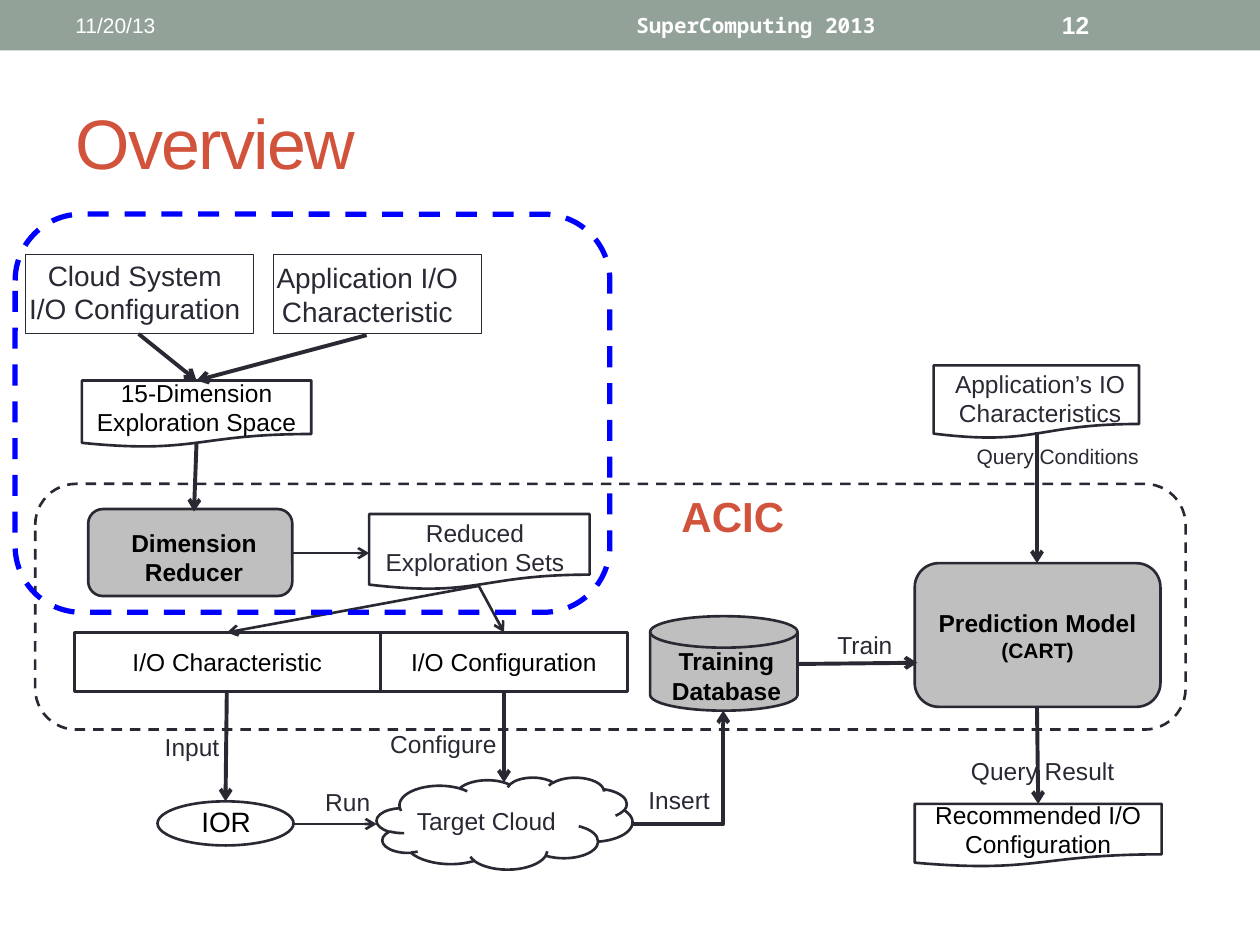
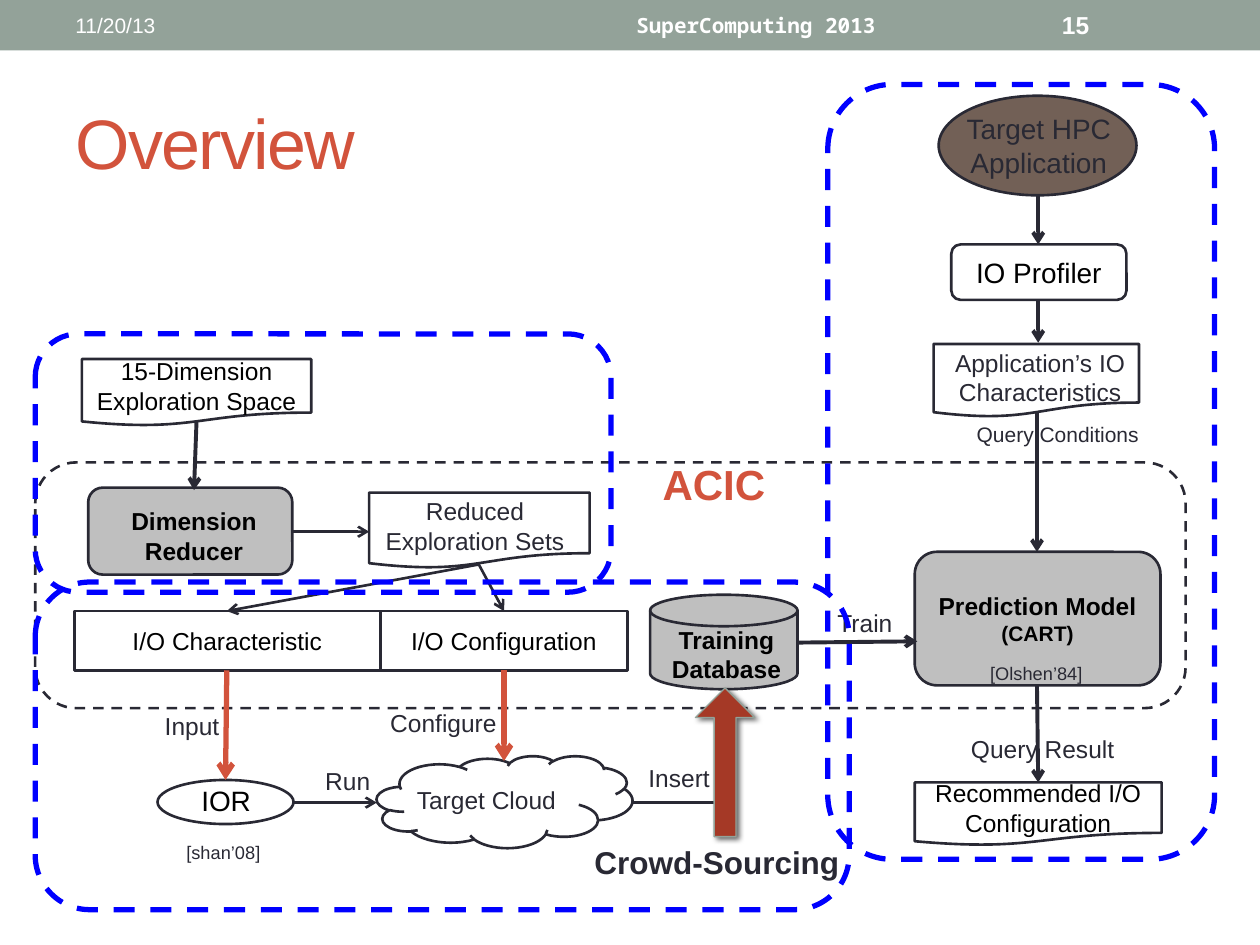
from lxml.etree import SubElement
from pptx import Presentation
from pptx.dml.color import RGBColor
from pptx.enum.dml import MSO_LINE
from pptx.enum.shapes import MSO_CONNECTOR, MSO_SHAPE
from pptx.enum.text import MSO_ANCHOR, MSO_AUTO_SIZE, PP_ALIGN
from pptx.oxml.ns import qn
from pptx.util import Pt

PX = 9144
TITLE_ONLY = 5
INK = RGBColor(0x29, 0x29, 0x34)
BLACK = RGBColor(0, 0, 0)
WHITE = RGBColor(0xFF, 0xFF, 0xFF)
GRAY = RGBColor(0xBF, 0xBF, 0xBF)
SAGE = RGBColor(0x93, 0xA2, 0x99)
RED = RGBColor(0xD2, 0x53, 0x3C)
DARK_RED = RGBColor(0xA5, 0x39, 0x26)
BROWN = RGBColor(0x72, 0x60, 0x56)
BLUE = RGBColor(0, 0, 0xFF)

RECT = MSO_SHAPE.RECTANGLE
ROUND = MSO_SHAPE.ROUNDED_RECTANGLE
OVAL = MSO_SHAPE.OVAL
DOCUMENT = MSO_SHAPE.FLOWCHART_DOCUMENT
PROCESS = MSO_SHAPE.FLOWCHART_ALTERNATE_PROCESS
DISK = MSO_SHAPE.FLOWCHART_MAGNETIC_DISK
CLOUD = MSO_SHAPE.CLOUD
UP_ARROW = MSO_SHAPE.UP_ARROW
STRAIGHT, ELBOW = MSO_CONNECTOR.STRAIGHT, MSO_CONNECTOR.ELBOW
LEFT, CENTER = PP_ALIGN.LEFT, PP_ALIGN.CENTER
TOP, MIDDLE = MSO_ANCHOR.TOP, MSO_ANCHOR.MIDDLE
DASH = MSO_LINE.DASH

HEADER = [
    ("11/20/13", (50, 2, 317, 36), dict(size=12, align=LEFT)),
    ("SuperComputing 2013", (375, 2, 450, 36), dict(size=12, bold=True, font="Noto Sans Mono")),
]
NUMBER_BOX = (833, 2, 117, 36)
TITLE_BOX = (50, 58, 900, 108)

FLOW_NODES = [
    (OVAL, (125, 636, 108, 35), WHITE, ""),
    (DOCUMENT, (65, 302, 182, 53), WHITE, "15-Dimension\nExploration Space"),
    (PROCESS, (70, 404, 162, 69), GRAY, ""),
    (DOCUMENT, (293, 408, 175, 60), None, ""),
    (DOCUMENT, (741, 290, 163, 58), None, ""),
    (DOCUMENT, (726, 638, 196, 50), None, "Recommended I/O Configuration"),
    (CLOUD, (299, 617, 203, 73), WHITE, ""),
    (RECT, (59, 502, 243, 47), None, "I/O Characteristic"),
    (RECT, (302, 502, 196, 47), None, "I/O Configuration"),
    (DISK, (516, 489, 117, 75), GRAY, ""),
]
ACIC_FRAME = (28, 384, 913, 195)

HEAVY = dict(color=BLACK, bold=True)
TIGHT = dict(wrap=False)
FLOW_LABELS = [
    ("Dimension Reducer", (72, 414, 164, 57), HEAVY),
    ("Training Database", (519, 508, 115, 57), HEAVY),
    ("Reduced\nExploration Sets", (286, 406, 182, 43), {}),
    ("Application’s IO\nCharacteristics", (741, 288, 169, 43), {}),
    ("Target Cloud", (321, 635, 134, 34), dict(align=LEFT, fill=WHITE)),
    ("IOR", (131, 634, 97, 37), dict(size=16, color=BLACK)),
    ("Query Conditions", (765, 347, 149, 30), dict(size=12, wrap=False)),
    ("Query Result", (760, 595, 135, 34), TIGHT),
    ("Run", (242, 620, 68, 34), TIGHT),
    ("Configure", (299, 574, 106, 34), TIGHT),
    ("Input", (121, 576, 63, 34), TIGHT),
    ("Train", (653, 495, 67, 34), TIGHT),
    ("Insert", (500, 618, 78, 34), TIGHT),
]
THIN_ARROWS = [
    (232, 439, 293, 439),
    (380, 465, 180, 502),
    (380, 465, 400, 502),
    (233, 654, 299, 654),
]
THICK_ARROWS = [
    (633, 527, 728, 526),
    (156, 351, 154, 406),
    (823, 561, 824, 638),
]
FEED_ARROWS = [(180, 549, 179, 636), (400, 549, 400, 621)]
INSERT_ARROW = (502, 654, 574, 564)
CITATION = dict(size=18, baseline=30, align=LEFT, wrap=False)

SLIDES = [
    dict(
        number="12", rise=0, feed=(INK, 2.25),
        model=(726, 447, 195, 114), query=(823, 343, 823, 447),
        highlights=[(12, 170, 472, 316)],
        nodes=[
            (RECT, (20, 202, 181, 63), None, "", dict(width=0.75)),
            (RECT, (217, 202, 165, 63), None, "", dict(width=0.75)),
        ],
        labels=[
            ("ACIC", (531, 384, 165, 50), dict(size=24, color=RED, bold=True, align=LEFT)),
            ("Cloud System\nI/O Configuration", (10, 200, 194, 64), dict(size=16)),
            ("Application I/O\nCharacteristic", (209, 202, 165, 64), dict(size=16)),
        ],
        arrows=[(110, 265, 156, 302), (291, 266, 156, 302)],
    ),
    dict(
        number="15", rise=17, feed=(RED, 3),
        model=(726, 438, 195, 106), query=(823, 326, 823, 438),
        highlights=[(28, 265, 457, 205), (28, 462, 646, 260), (657, 67, 307, 615)],
        nodes=[
            (OVAL, (745, 76, 157, 79), BROWN, "", {}),
            (ROUND, (755, 194, 139, 44), None, "IO Profiler", dict(size=16)),
        ],
        labels=[
            ("ACIC", (516, 359, 165, 50), dict(size=24, color=RED, bold=True, align=LEFT)),
            ("Target HPC\nApplication", (753, 84, 143, 64), dict(size=16)),
            ("[Olshen’84]", (776, 518, 105, 30), CITATION),
            ("[shan’08]", (138, 660, 88, 30), CITATION),
            ("Crowd-Sourcing", (462, 664, 244, 40), dict(size=18, bold=True, align=LEFT)),
        ],
        arrows=[(824, 155, 824, 194), (824, 238, 824, 272)],
        crowd_arrow=(552, 546, 47, 118),
    ),
]


def emu(lengths):
    return [length * PX for length in lengths]


def lift_box(box, rise):
    left, top, width, height = box
    return left, top - rise, width, height


def lift_line(ends, rise):
    x1, y1, x2, y2 = ends
    return x1, y1 - rise, x2, y2 - rise


def write_text(shape, text, size=14, last_size=None, color=INK, bold=False, font="Arial",
               align=CENTER, anchor=TOP, wrap=True, spacing=None, baseline=None):
    frame = shape.text_frame
    frame.auto_size = MSO_AUTO_SIZE.NONE
    frame.word_wrap = wrap
    frame.vertical_anchor = anchor
    frame.text = text
    for paragraph in frame.paragraphs:
        paragraph.alignment = align
        run = paragraph.runs[0]
        run.font.size = Pt(size)
        run.font.name = font
        run.font.bold = bold
        run.font.color.rgb = color
        properties = run.font._element
        if spacing:
            properties.set("spc", str(spacing * 100))
        if baseline:
            properties.set("baseline", str(baseline * 1000))
    if last_size:
        run.font.size = Pt(last_size)


def add_label(slide, text, box, fill=None, **text_format):
    label = slide.shapes.add_textbox(*emu(box))
    if fill is not None:
        label.fill.solid()
        label.fill.fore_color.rgb = fill
    write_text(label, text, **text_format)


def add_node(slide, kind, box, fill=None, text="", line=INK, width=1.5, dash=None, **text_format):
    shape = slide.shapes.add_shape(kind, *emu(box))
    shape.shadow.inherit = False
    if fill is None:
        shape.fill.background()
    else:
        shape.fill.solid()
        shape.fill.fore_color.rgb = fill
    if line is None:
        shape.line.fill.background()
    else:
        shape.line.color.rgb = line
        shape.line.width = Pt(width)
        if dash:
            shape.line.dash_style = dash
    if text:
        write_text(shape, text, **{"color": BLACK, "anchor": MIDDLE, **text_format})
    return shape


def add_arrow(slide, ends, color=INK, width=2.25, kind=STRAIGHT):
    connector = slide.shapes.add_connector(kind, *emu(ends))
    connector.line.color.rgb = color
    connector.line.width = Pt(width)
    properties = connector.element.spPr
    SubElement(properties.find(qn("a:ln")), qn("a:tailEnd"), type="arrow")
    SubElement(properties, qn("a:effectLst"))
    if kind == ELBOW:
        properties.find(qn("a:prstGeom")).set("prst", "bentConnector2")


def add_crowd_arrow(slide, box):
    arrow = add_node(slide, UP_ARROW, box, DARK_RED, line=SAGE, width=0.75)
    arrow.adjustments[0] = 0.37
    arrow.adjustments[1] = 0.5
    effects = arrow.element.spPr.find(qn("a:effectLst"))
    shadow = SubElement(effects, qn("a:outerShdw"), blurRad=str(Pt(3)), dist=str(Pt(2)),
                        dir=str(45 * 60000), rotWithShape="0")
    shade = SubElement(shadow, qn("a:srgbClr"), val=str(BLACK))
    SubElement(shade, qn("a:alpha"), val="60000")


def add_header(slide, number):
    add_node(slide, RECT, (0, 0, 1000, 40), SAGE, line=None)
    numbered = (number, NUMBER_BOX, dict(bold=True, align=LEFT))
    for text, box, text_format in HEADER + [numbered]:
        add_label(slide, text, box, color=WHITE, anchor=MIDDLE, **text_format)
    title = slide.shapes.title
    title.left, title.top, title.width, title.height = emu(TITLE_BOX)
    write_text(title, "Overview", size=40, color=RED, align=LEFT, anchor=MIDDLE, spacing=-1)


def add_flow(slide, rise, model, query, feed):
    for kind, box, fill, text in FLOW_NODES:
        add_node(slide, kind, lift_box(box, rise), fill, text)
    add_node(slide, PROCESS, model, GRAY, "Prediction Model\n(CART)", bold=True, last_size=12)
    add_node(slide, ROUND, lift_box(ACIC_FRAME, rise), dash=DASH)
    for text, box, text_format in FLOW_LABELS:
        add_label(slide, text, lift_box(box, rise), **text_format)
    for ends in THIN_ARROWS:
        add_arrow(slide, lift_line(ends, rise), width=1.5)
    for ends in THICK_ARROWS:
        add_arrow(slide, lift_line(ends, rise))
    for ends in FEED_ARROWS:
        add_arrow(slide, lift_line(ends, rise), *feed)
    add_arrow(slide, lift_line(INSERT_ARROW, rise), kind=ELBOW)
    add_arrow(slide, query)


def build_slide(presentation, content):
    slide = presentation.slides.add_slide(presentation.slide_layouts[TITLE_ONLY])
    add_header(slide, content["number"])
    add_flow(slide, content["rise"], content["model"], content["query"], content["feed"])
    for box in content["highlights"]:
        add_node(slide, ROUND, box, line=BLUE, width=3, dash=DASH)
    for kind, box, fill, text, node_format in content["nodes"]:
        add_node(slide, kind, box, fill, text, **node_format)
    if "crowd_arrow" in content:
        add_crowd_arrow(slide, content["crowd_arrow"])
    for text, box, text_format in content["labels"]:
        add_label(slide, text, box, **text_format)
    for ends in content["arrows"]:
        add_arrow(slide, ends)


def main():
    presentation = Presentation()
    presentation.slide_width, presentation.slide_height = emu((1000, 750))
    for content in SLIDES:
        build_slide(presentation, content)
    presentation.save("out.pptx")


if __name__ == "__main__":
    main()
